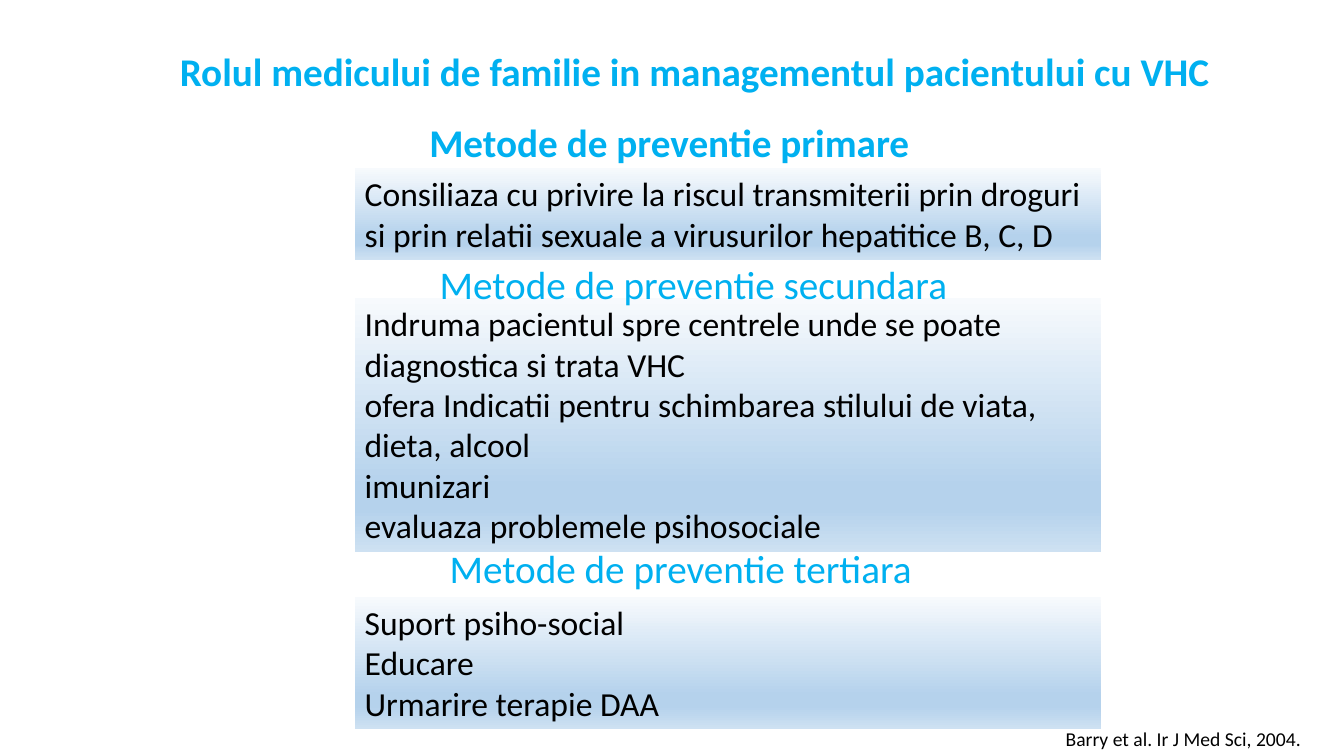
from pptx import Presentation
from pptx.dml.color import RGBColor
from pptx.enum import shapes, text
from pptx.oxml import parse_xml
from pptx.oxml.ns import nsdecls
from pptx.util import Cm, Pt

SKY = RGBColor(0x00, 0xB0, 0xF0)
BLACK = RGBColor(0x00, 0x00, 0x00)
STOPS = [
    (0, RGBColor(0xF7, 0xFA, 0xFD)),
    (74, RGBColor(0xB5, 0xD2, 0xEC)),
    (83, RGBColor(0xB5, 0xD2, 0xEC)),
    (100, RGBColor(0xCE, 0xE1, 0xF2)),
]
CENTER = text.PP_ALIGN.CENTER
LEFT = text.PP_ALIGN.LEFT


def write(shape, lines, size, color, align, bold=False):
    frame = shape.text_frame
    frame.text = "\n".join(lines)
    frame.word_wrap = True
    for para in frame.paragraphs:
        para.alignment = align
        for run in para.runs:
            font = run.font
            font.name, font.size, font.bold = "Calibri", Pt(size), bold
            font.color.rgb = color
    return frame


def add_label(slide, place, words, size=28, color=SKY, bold=False):
    box = slide.shapes.add_textbox(*map(Cm, place))
    frame = write(box, [words], size, color, CENTER, bold)
    frame.auto_size = text.MSO_AUTO_SIZE.SHAPE_TO_FIT_TEXT
    return frame


def shade(shape):
    """Fill the shape from top to bottom with the four colour stops."""
    stops = "".join(
        f'<a:gs pos="{pos * 1000}"><a:srgbClr val="{color}"/></a:gs>'
        for pos, color in STOPS
    )
    fill = parse_xml(
        f'<a:gradFill {nsdecls("a")} rotWithShape="1"><a:gsLst>{stops}</a:gsLst>'
        '<a:lin ang="5400000" scaled="0"/></a:gradFill>'
    )
    shape.fill.background()
    props = shape.element.spPr
    props.replace(props.find("{*}noFill"), fill)


def add_panel(slide, top, height, lines):
    panel = slide.shapes.add_shape(
        shapes.MSO_SHAPE.RECTANGLE, Cm(8.94), Cm(top), Cm(18.8), Cm(height)
    )
    panel.shadow.inherit = False
    shade(panel)
    panel.line.fill.background()
    frame = write(panel, lines, 24, BLACK, LEFT)
    frame.vertical_anchor = text.MSO_ANCHOR.TOP
    frame.auto_size = text.MSO_AUTO_SIZE.SHAPE_TO_FIT_TEXT


def main():
    deck = Presentation()
    deck.slide_width, deck.slide_height = Cm(33.87), Cm(19.05)
    slide = deck.slides.add_slide(deck.slide_layouts[6])

    first = add_label(slide, (2.26, 2.87, 29.21, 1.55),
                      "Metode de preventie primare", bold=True)
    first.auto_size = text.MSO_AUTO_SIZE.NONE
    first.vertical_anchor = text.MSO_ANCHOR.MIDDLE
    first.paragraphs[0].line_spacing = 0.9

    add_panel(slide, 4.24, 2.31, [
        "Consiliaza cu privire la riscul transmiterii prin droguri "
        "si prin relatii sexuale a virusurilor hepatitice B, C, D",
    ])
    add_label(slide, (1.27, 1.07, 32.46, 1.45),
              "Rolul medicului de familie in managementul pacientului cu VHC",
              bold=True)
    add_panel(slide, 7.52, 6.4, [
        "Indruma pacientul spre centrele unde se poate diagnostica si trata VHC",
        "ofera Indicatii pentru schimbarea stilului de viata, dieta, alcool",
        "imunizari",
        "evaluaza problemele psihosociale",
    ])
    add_label(slide, (3.25, 6.43, 28.45, 1.45), "Metode de preventie secundara")
    source = add_label(slide, (26.42, 18.19, 6.81, 0.86),
                       "Barry et al. Ir J Med Sci, 2004.", 14, BLACK)
    source.word_wrap = False
    add_label(slide, (8.33, 13.59, 17.65, 1.45), "Metode de preventie tertiara")
    add_panel(slide, 15.04, 3.33, [
        "Suport psiho-social", "Educare", "Urmarire terapie DAA",
    ])
    deck.save("out.pptx")


if __name__ == "__main__":
    main()
